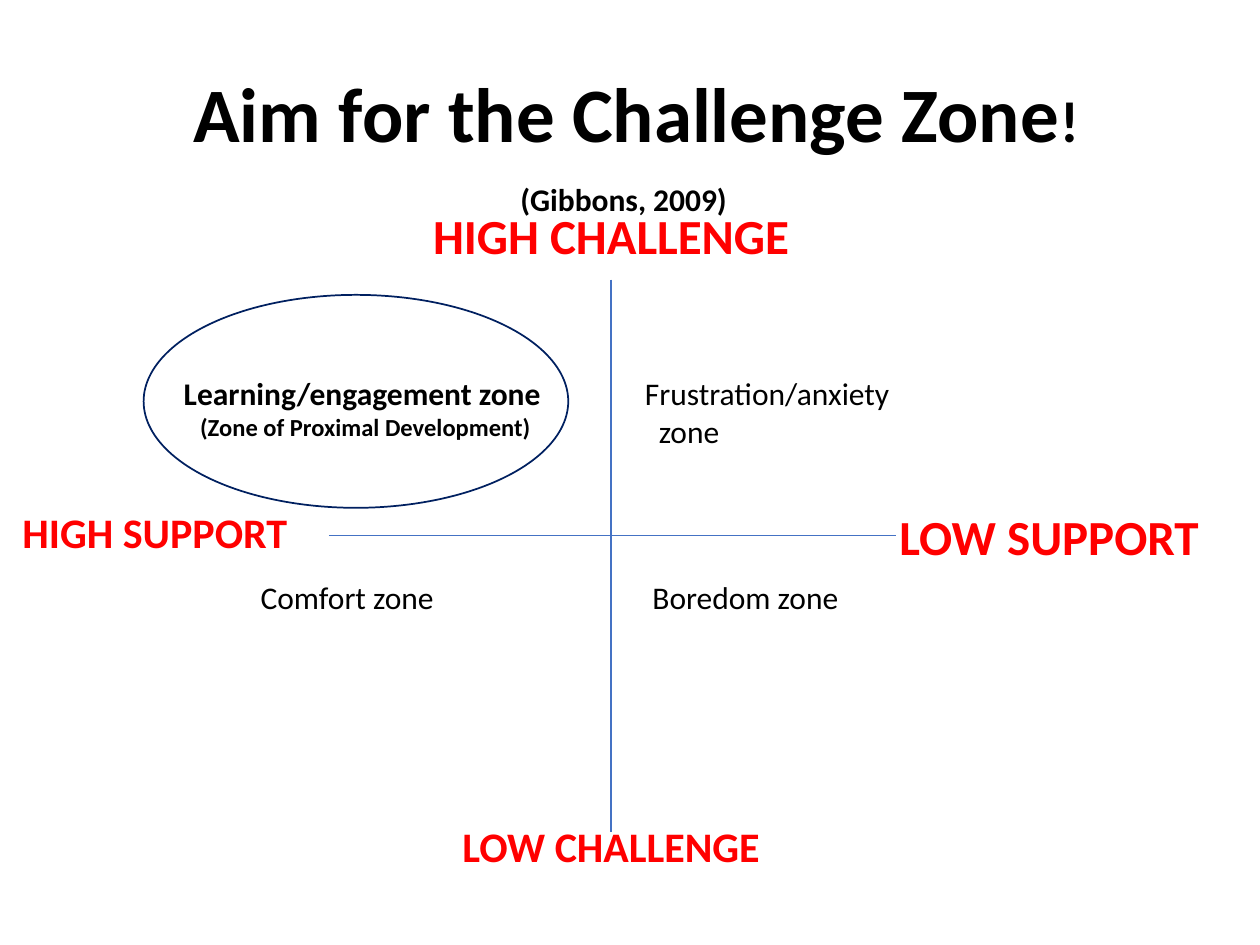
from pptx import Presentation
from pptx.dml.color import RGBColor
from pptx.enum.shapes import MSO_CONNECTOR as Conn, MSO_SHAPE as Shape
from pptx.enum.text import MSO_ANCHOR as Anchor, PP_ALIGN as Align
from pptx.util import Inches, Pt
from lxml.etree import SubElement
from pptx.oxml.ns import qn

WIDE, HIGH = 10, 7.5
FONT = "Calibri"
BLACK, RED, BLUE, NAVY = "000000", "FF0000", "4472C4", "002060"

# Axes of the grid: they cross at (MID_X, MID_Y)
MID_X, MID_Y = 4.85, 4.25
LEFT, RIGHT, TOP, FOOT = 2.61, 7.11, 2.22, 6.6

# Content: each line is a list of (words, size, bold) runs, then its format
TITLE = [
    ([("Aim for the Challenge Zone", 44, True), ("!", 33, True)], {"indent": 0.1}),
    ([("(Gibbons, 2009)", 18, True)], {"right": 0.1, "before": 13}),
]
# Axis ends: words, size, left, top, width, alignment
ENDS = [
    ("HIGH CHALLENGE", 28, MID_X - 2, 1.58, 4, Align.CENTER),
    ("LOW CHALLENGE", 24, MID_X - 2, 6.46, 4, Align.CENTER),
    ("HIGH SUPPORT", 24, 0.08, 3.97, 3.15, Align.LEFT),
    ("LOW SUPPORT", 28, RIGHT - 0.07, 3.97, 2.83, Align.LEFT),
]
# Zones: left, top, lines
UPPER, LOWER = 2.92, 4.54
ZONES = [
    (1.36, UPPER, [([("Learning/engagement zone", 18, True)], {}),
                   ([("(Zone of Proximal Development)", 14, True)], {"indent": 0.13})]),
    (MID_X, UPPER, [([("Frustration/anxiety", 18, False)], {"indent": 0.17}),
                    ([("zone", 18, False)], {"indent": 0.28})]),
    (1.97, LOWER, [([("Comfort zone", 18, False)], {})]),
    (MID_X, LOWER, [([("Boredom zone", 18, False)], {"indent": 0.23})]),
]


def paint(code):
    return RGBColor.from_string(code)


def write(slide, lines, x, y, w, h, color=BLACK, align=Align.LEFT, anchor=Anchor.TOP):
    frame = slide.shapes.add_textbox(*map(Inches, (x, y, w, h))).text_frame
    frame.word_wrap = True
    frame.vertical_anchor = anchor
    for i, (runs, form) in enumerate(lines):
        para = frame.add_paragraph() if i else frame.paragraphs[0]
        para.alignment = align
        props = para._p.get_or_add_pPr()
        props.set("marL", str(Inches(form.get("indent", 0))))
        props.set("marR", str(Inches(form.get("right", 0))))
        if "before" in form:
            para.space_before = Pt(form["before"])
        for words, size, bold in runs:
            run = para.add_run()
            run.text = words
            run.font.name, run.font.size, run.font.bold = FONT, Pt(size), bold
            run.font.color.rgb = paint(color)


def axis(slide, x1, y1, x2, y2):
    line = slide.shapes.add_connector(Conn.STRAIGHT, *map(Inches, (x1, y1, x2, y2)))
    line.line.color.rgb, line.line.width = paint(BLUE), Pt(1)
    SubElement(line._element.spPr, qn("a:effectLst"))


def main():
    deck = Presentation()
    deck.slide_width, deck.slide_height = Inches(WIDE), Inches(HIGH)
    slide = deck.slides.add_slide(deck.slide_layouts[6])

    # Title
    write(slide, TITLE, 0.69, 0.4, 8.62, 1.45, align=Align.CENTER, anchor=Anchor.MIDDLE)

    # Axes and their ends
    axis(slide, MID_X, TOP, MID_X, FOOT)
    axis(slide, LEFT, MID_Y, RIGHT, MID_Y)
    for words, size, x, y, w, align in ENDS:
        write(slide, [([(words, size, True)], {})], x, y, w, 0.55, color=RED, align=align)

    # Zones
    for x, y, lines in ZONES:
        write(slide, lines, x, y, 3.05, 0.35 * len(lines))

    # Ring around the zone to aim for
    ring = slide.shapes.add_shape(Shape.OVAL, *map(Inches, (1.14, 2.34, 3.37, 1.69)))
    ring.shadow.inherit = False
    ring.fill.background()
    ring.line.color.rgb, ring.line.width = paint(NAVY), Pt(1)

    deck.save("out.pptx")


if __name__ == "__main__":
    main()
